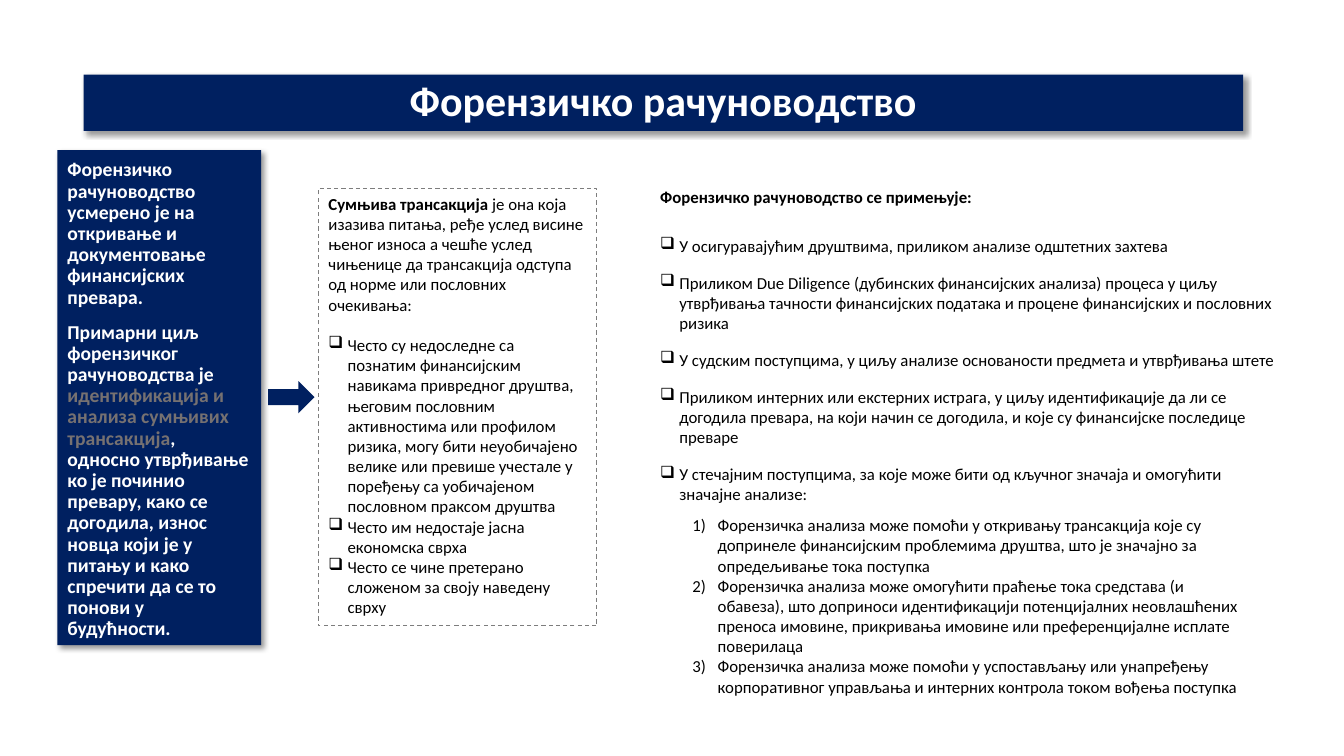
from lxml import etree
from pptx import Presentation, util as u
from pptx.dml.color import RGBColor
from pptx.enum import dml, shapes, text
from pptx.oxml import ns

NAVY = RGBColor(0x00, 0x20, 0x60)
WHITE = RGBColor(0xFF, 0xFF, 0xFF)
BLACK = RGBColor(0x00, 0x00, 0x00)
GRAY = RGBColor(0x76, 0x71, 0x71)
EDGE = RGBColor(0x7D, 0x7D, 0x7D)
PX = 9144

deck = Presentation()
deck.slide_width, deck.slide_height = 1333 * PX, 750 * PX
slide = deck.slides.add_slide(deck.slide_layouts[6])
pen = slide.shapes


def write(frame, lines, size, color, bold=False):
    frame.word_wrap = True
    frame.text = "\n".join(lines)
    for para in frame.paragraphs:
        para.alignment = text.PP_ALIGN.LEFT
        for run in para.runs:
            run.font.name = "Calibri"
            run.font.size = u.Pt(size)
            run.font.color.rgb = color
            run.font.bold = bold
    return frame.paragraphs


def mark(para, indent, tag, **value):
    props = para._p.get_or_add_pPr()
    props.set("marL", str(indent * PX))
    props.set("indent", str(-indent * PX))
    etree.SubElement(props, ns.qn(tag), value)


title = ["Форензичко рачуноводство"]
goals = [
    "Форензичко рачуноводство усмерено је на откривање и документовање финансијских превара.",
    "Примарни циљ форензичког рачуноводства је ",
]
panels = [
    ((83, 74, 1150, 56), title, 30),
    ((57, 149, 202, 491), goals, 14),
]
for place, lines, size in panels:
    panel = pen.add_shape(shapes.MSO_SHAPE.RECTANGLE, *[n * PX for n in place])
    panel.fill.solid()
    panel.fill.fore_color.rgb = NAVY
    panel.line.fill.background()
    panel.shadow.inherit = False
    glow = etree.SubElement(
        panel._element.spPr.find(ns.qn("a:effectLst")), ns.qn("a:outerShdw"),
        blurRad=str(u.Pt(4)), dist=str(u.Pt(3)), dir="2700000",
        algn="tl", rotWithShape="0")
    tint = etree.SubElement(glow, ns.qn("a:srgbClr"), val="000000")
    etree.SubElement(tint, ns.qn("a:alpha"), val="40000")
    panel.text_frame.vertical_anchor = text.MSO_ANCHOR.BOTTOM
    paras = write(panel.text_frame, lines, size, WHITE, True)
    for para in paras:
        para.line_spacing = 0.9
    for para in paras[1:]:
        para.space_before = u.Pt(10)
    if lines is title:
        paras[0].alignment = text.PP_ALIGN.CENTER

for words, color in [
    ("идентификација и анализа сумњивих трансакција", GRAY),
    (", односно утврђивање ко је починио превару, како се догодила, износ новца "
     "који је у питању и како спречити да се то понови у будућности.", WHITE),
]:
    run = paras[1].add_run()
    run.text = words
    run.font.name = "Calibri"
    run.font.size = u.Pt(14)
    run.font.bold = True
    run.font.color.rgb = color

arrow = pen.add_shape(shapes.MSO_SHAPE.RIGHT_ARROW, 266 * PX, 378 * PX, 46 * PX, 32 * PX)
arrow.fill.solid()
arrow.fill.fore_color.rgb = NAVY
arrow.line.fill.background()
arrow.shadow.inherit = False

box = pen.add_shape(shapes.MSO_SHAPE.RECTANGLE, 316 * PX, 187 * PX, 276 * PX, 434 * PX)
box.fill.background()
box.line.color.rgb = EDGE
box.line.width = u.Pt(0.75)
box.line.dash_style = dml.MSO_LINE.DASH
box.shadow.inherit = False
box.text_frame.vertical_anchor = text.MSO_ANCHOR.TOP
paras = write(box.text_frame, [
    "Сумњива трансакција ",
    "Често су недоследне са познатим финансијским навикама привредног друштва, "
    "његовим пословним активностима или профилом ризика, могу бити неуобичајено "
    "велике или превише учестале у поређењу са уобичајеном пословном праксом друштвa",
    "Често им недостаје јасна економска сврха",
    "Често се чине претерано сложеном за своју наведену сврху",
], 12, BLACK)
paras[0].runs[0].font.bold = True
run = paras[0].add_run()
run.text = ("је она која изазива питања, ређе услед висине њеног износа а чешће услед "
            "чињенице да трансакција одступа од норме или пословних очекивања:")
run.font.name = "Calibri"
run.font.size = u.Pt(12)
run.font.color.rgb = BLACK
paras[0].space_after = u.Pt(14.6)
for para in paras[1:]:
    mark(para, 19, "a:buChar", char="❑")

uses = pen.add_textbox(645 * PX, 180 * PX, 634 * PX, 328 * PX)
paras = write(uses.text_frame, [
    "Форензичко рачуноводство се примењује:",
    "У осигуравајућим друштвима, приликом анализе одштетних захтева",
    "Приликом Due Diligence (дубинских финансијских анализа) процеса у циљу "
    "утврђивања тачности финансијских података и процене финансијских и пословних ризика",
    "У судским поступцима, у циљу анализе основаности предмета и утврђивања штете",
    "Приликом интерних или екстерних истрага, у циљу идентификације да ли се догодила "
    "превара, на који начин се догодила, и које су финансијске последице преваре",
    "У стечајним поступцима, за које може бити од кључног значаја и омогућити значајне анализе:",
], 12, BLACK)
paras[0].runs[0].font.bold = True
paras[0].space_after = u.Pt(14.6)
for para in paras[1:]:
    para.space_before = para.space_after = u.Pt(6)
    mark(para, 19, "a:buChar", char="❑")

steps = pen.add_textbox(677 * PX, 506 * PX, 570 * PX, 212 * PX)
paras = write(steps.text_frame, [
    "Форензичка анализа може помоћи у откривању трансакција које су допринеле "
    "финансијским проблемима друштва, што је значајно за опредељивање тока поступка",
    "Форензичка анализа може омогућити праћење тока средстава (и обавеза), што доприноси "
    "идентификацији потенцијалних неовлашћених преноса имовине, прикривања имовине или "
    "преференцијалне исплате поверилаца",
    "Форензичка анализа може помоћи у успостављању или унапређењу корпоративног "
    "управљања и интерних контрола током вођења поступка",
], 12, BLACK)
for para in paras:
    mark(para, 25, "a:buAutoNum", type="arabicParenR")

deck.save("out.pptx")
